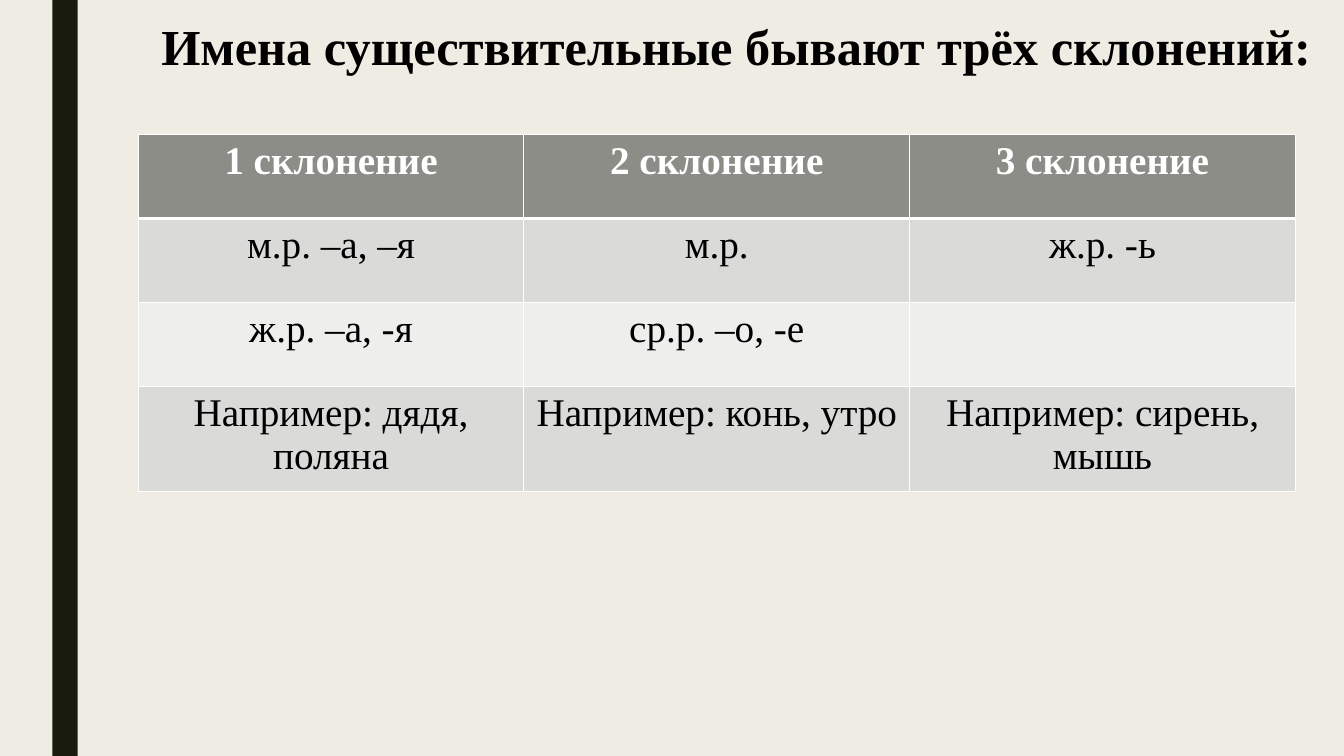
from dataclasses import dataclass

from lxml import etree
from pptx import Presentation
from pptx import util as u
from pptx.dml.color import RGBColor
from pptx.enum import shapes, text
from pptx.oxml import ns


@dataclass(frozen=True)
class Theme:
    font: str = "Times New Roman"
    paper: str = "EFEDE3"
    bar: str = "191B0E"
    ink: str = "000000"
    white: str = "FFFFFF"
    head: str = "8C8D86"
    bands: tuple = ("DADBD9", "EEEEED")
    big: int = 36
    mid: int = 28
    thin: int = 1
    thick: int = 3


@dataclass(frozen=True)
class Box:
    """Place and size in percent of the slide."""
    x: float
    y: float
    w: float
    h: float


@dataclass(frozen=True)
class Row:
    cells: tuple
    h: float = 11.11


THEME = Theme()
BAR = Box(3.9, 0, 1.88, 100)
TITLE = Box(11.25, 1.2, 87.9, 9.47)
TABLE = Box(10.28, 17.79, 86.1, 47.2)
ROWS = (
    Row(("1 склонение", "2 склонение", "3 склонение")),
    Row(("м.р. –а, –я", "м.р.", "ж.р. -ь")),
    Row(("ж.р. –а, -я", "ср.р. –о, -е", "")),
    Row(("Например: дядя, поляна", "Например: конь, утро",
         "Например: сирень, мышь"), 13.87),
)

deck = Presentation()
deck.slide_width, deck.slide_height = u.Inches(13.33), u.Inches(7.5)


def across(part: float) -> int:
    return round(deck.slide_width * part / 100)


def down(part: float) -> int:
    return round(deck.slide_height * part / 100)


def place(box: Box) -> tuple:
    return across(box.x), down(box.y), across(box.w), down(box.h)


def paint(fill, color: str) -> None:
    fill.solid()
    fill.fore_color.rgb = RGBColor.from_string(color)


def write(frame, words: str, size: int, color: str, bold: bool, align) -> None:
    para = frame.paragraphs[0]
    para.alignment = align
    if not words:
        return
    run = para.add_run()
    run.text = words
    form = {"name": THEME.font, "size": u.Pt(size), "bold": bold}
    for key, value in form.items():
        setattr(run.font, key, value)
    run.font.color.rgb = RGBColor.from_string(color)


def edge(cell, top: int, bottom: int) -> None:
    props = cell._tc.get_or_add_tcPr()
    sides = {"L": THEME.thin, "R": THEME.thin, "T": top, "B": bottom}
    for spot, (side, width) in enumerate(sides.items()):
        line = etree.Element(ns.qn(f"a:ln{side}"), w=str(u.Pt(width)))
        solid = etree.SubElement(line, ns.qn("a:solidFill"))
        etree.SubElement(solid, ns.qn("a:srgbClr"), val=THEME.white)
        props.insert(spot, line)


def add_bar(slide) -> None:
    bar = slide.shapes.add_shape(shapes.MSO_SHAPE.RECTANGLE, *place(BAR))
    bar.shadow.inherit = False
    paint(bar.fill, THEME.bar)
    bar.line.fill.background()


def add_title(slide) -> None:
    title = slide.shapes.title
    for key, value in zip(("left", "top", "width", "height"), place(TITLE)):
        setattr(title, key, value)
    frame = title.text_frame
    form = {"word_wrap": True, "auto_size": text.MSO_AUTO_SIZE.NONE,
            "vertical_anchor": text.MSO_ANCHOR.BOTTOM}
    for key, value in form.items():
        setattr(frame, key, value)
    write(frame, "Имена существительные бывают трёх склонений:",
          THEME.big, THEME.ink, True, text.PP_ALIGN.LEFT)


def add_grid(slide) -> None:
    count = len(ROWS[0].cells)
    grid = slide.shapes.add_table(len(ROWS), count, *place(TABLE)).table
    for col in grid.columns:
        col.width = across(TABLE.w / count)
    for r, row in enumerate(ROWS):
        grid.rows[r].height = down(row.h)
        head = r == 0
        fill = THEME.head if head else THEME.bands[(r - 1) % 2]
        ink = THEME.white if head else THEME.ink
        for c, words in enumerate(row.cells):
            cell = grid.cell(r, c)
            paint(cell.fill, fill)
            edge(cell, THEME.thick if r == 1 else THEME.thin,
                 THEME.thick if head else THEME.thin)
            write(cell.text_frame, words, THEME.mid, ink, head,
                  text.PP_ALIGN.CENTER)


def main() -> None:
    # Background and side bar
    slide = deck.slides.add_slide(deck.slide_layouts[5])
    paint(slide.background.fill, THEME.paper)
    add_bar(slide)
    # Heading and table of declensions
    add_title(slide)
    add_grid(slide)
    deck.save("out.pptx")


if __name__ == "__main__":
    main()
